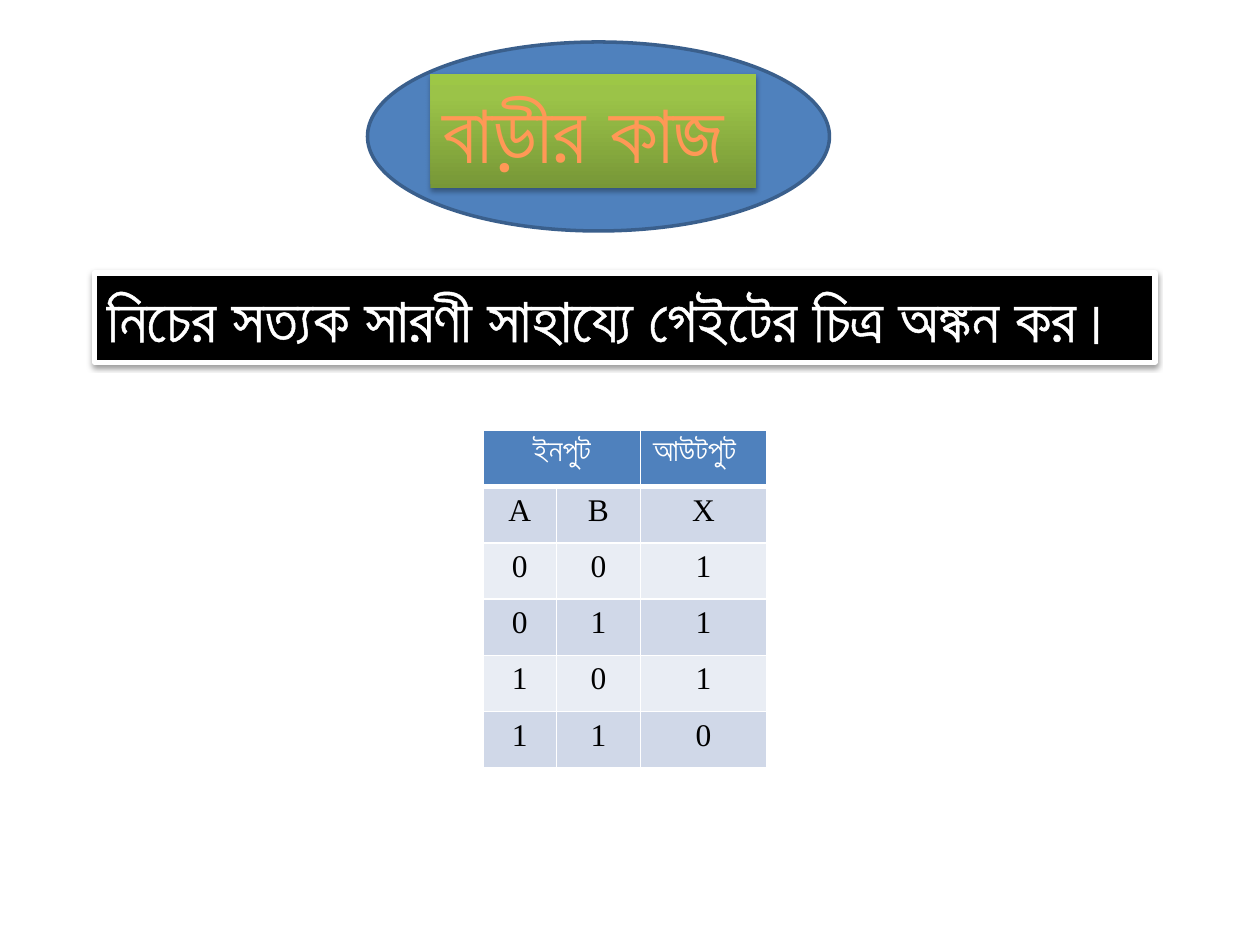
from dataclasses import dataclass
from lxml.etree import SubElement
from pptx import Presentation
from pptx.dml.color import RGBColor as RGB
from pptx.enum.shapes import MSO_SHAPE as SHAPE
from pptx.enum.text import MSO_AUTO_SIZE as AUTO, PP_ALIGN as ALIGN
from pptx.oxml.ns import qn
from pptx.util import Inches, Pt


@dataclass(frozen=True)
class Theme:
    blue: str = "4F81BD"
    blue_edge: str = "3A5F8C"
    orange: str = "FF9856"
    white: str = "FFFFFF"
    black: str = "000000"
    bands: tuple = ("E9EDF4", "D0D8E8")
    greens: tuple = ((0, "779737"), (80, "9BC348"), (100, "9DC746"))
    sans: str = "Arial"
    serif: str = "Times New Roman"
    title: int = 48
    task: int = 36
    cell: int = 18


T = Theme()
COLS, ROWS = 120, 90
WIDTH, HEIGHT = Inches(10), Inches(7.5)
HEADER = ("ইনপুট", None, "আউটপুট")
TRUTH = ("ABX", "001", "011", "101", "110")


def grid(col, row, cols, rows):
    return [round(v) for v in (col * WIDTH / COLS, row * HEIGHT / ROWS,
                               cols * WIDTH / COLS, rows * HEIGHT / ROWS)]


def add_color(parent, color, alpha=None):
    clr = SubElement(parent, qn("a:srgbClr"), val=color)
    if alpha:
        SubElement(clr, qn("a:alpha"), val=str(alpha * 1000))


def add_line(parent, tag, color, width):
    ln = SubElement(parent, qn(tag), w=str(Pt(width)))
    add_color(SubElement(ln, qn("a:solidFill")), color)
    return ln


def add_shadow(s, alpha, blur, dist):
    s.shadow.inherit = False
    effects = s._element.spPr.find(qn("a:effectLst"))
    shadow = SubElement(effects, qn("a:outerShdw"), blurRad=str(Pt(blur)),
                        dist=str(Pt(dist)), dir="5400000", rotWithShape="0")
    add_color(shadow, T.black, alpha)


def fill_gradient(s, stops):
    s.fill.gradient()
    s.fill.gradient_angle = 90
    gs_list = s._element.spPr.find(qn("a:gradFill")).find(qn("a:gsLst"))
    for gs in list(gs_list):
        gs_list.remove(gs)
    for pos, color in stops:
        add_color(SubElement(gs_list, qn("a:gs"), pos=str(pos * 1000)), color)


def add_run(p, text, size, color, font=T.sans, bold=False):
    r = p.add_run()
    r.text = text
    r.font.size = Pt(size)
    r.font.name = font
    r.font.bold = bold
    r.font.color.rgb = RGB.from_string(color)
    return r


def add_label(slide, box, text, size, color, bold=False):
    s = slide.shapes.add_textbox(*box)
    tf = s.text_frame
    tf.word_wrap = True
    tf.auto_size = AUTO.SHAPE_TO_FIT_TEXT
    return s, add_run(tf.paragraphs[0], text, size, color, bold=bold)


def add_title(slide, oval_box, label_box):
    s = slide.shapes.add_shape(SHAPE.OVAL, *oval_box)
    s.shadow.inherit = False
    s.fill.solid()
    s.fill.fore_color.rgb = RGB.from_string(T.blue)
    s.line.color.rgb = RGB.from_string(T.blue_edge)
    s.line.width = Pt(2)
    s, r = add_label(slide, label_box, "বাড়ীর কাজ", T.title, T.orange, True)
    fill_gradient(s, T.greens)
    add_shadow(s, 35, 3.1, 1.8)


def add_task(slide, box):
    s, r = add_label(slide, box, "নিচের সত্যক সারণী সাহায্যে গেইটের চিত্র অঙ্কন কর।",
                     T.task, T.white)
    s.fill.solid()
    s.fill.fore_color.rgb = RGB.from_string(T.black)
    s.line.color.rgb = RGB.from_string(T.white)
    s.line.width = Pt(3)
    add_shadow(s, 38, 3.1, 1.6)
    rPr = r.font._element
    rPr.insert(0, add_line(rPr, "a:ln", T.white, 1.45))


def style_cell(cell, row):
    tcPr = cell._tc.get_or_add_tcPr()
    widths = {"L": 1, "R": 1, "T": 3 if row == 1 else 1, "B": 3 if row == 0 else 1}
    for side, width in widths.items():
        add_line(tcPr, f"a:ln{side}", T.white, width)
    cell.fill.solid()
    cell.fill.fore_color.rgb = RGB.from_string(T.bands[row % 2] if row else T.blue)


def add_truth_table(slide, box, shares):
    rows = (HEADER, *TRUTH)
    table = slide.shapes.add_table(len(rows), len(shares), *box).table
    for col, share in zip(table.columns, shares):
        col.width = round(box[2] * share / sum(shares))
    for i, values in enumerate(rows):
        table.rows[i].height = round(box[3] / len(rows))
        for j, value in enumerate(values):
            cell = table.cell(i, j)
            style_cell(cell, i)
            if value is None:
                continue
            p = cell.text_frame.paragraphs[0]
            if i or j == 0:
                p.alignment = ALIGN.CENTER
            if i:
                add_run(p, value, T.cell, T.black, T.serif)
            else:
                add_run(p, value, T.cell, T.white, bold=True)
    table.cell(0, 0).merge(table.cell(0, 1))


def main():
    prs = Presentation()
    prs.slide_width, prs.slide_height = WIDTH, HEIGHT
    slide = prs.slides.add_slide(prs.slide_layouts[6])
    add_title(slide, grid(35, 4, 44, 18), grid(41, 7, 31, 10.9))
    add_task(slide, grid(9, 26, 101, 8.5))
    add_truth_table(slide, grid(46, 41, 27, 32.16), (7, 8, 12))
    prs.save("out.pptx")


if __name__ == "__main__":
    main()
